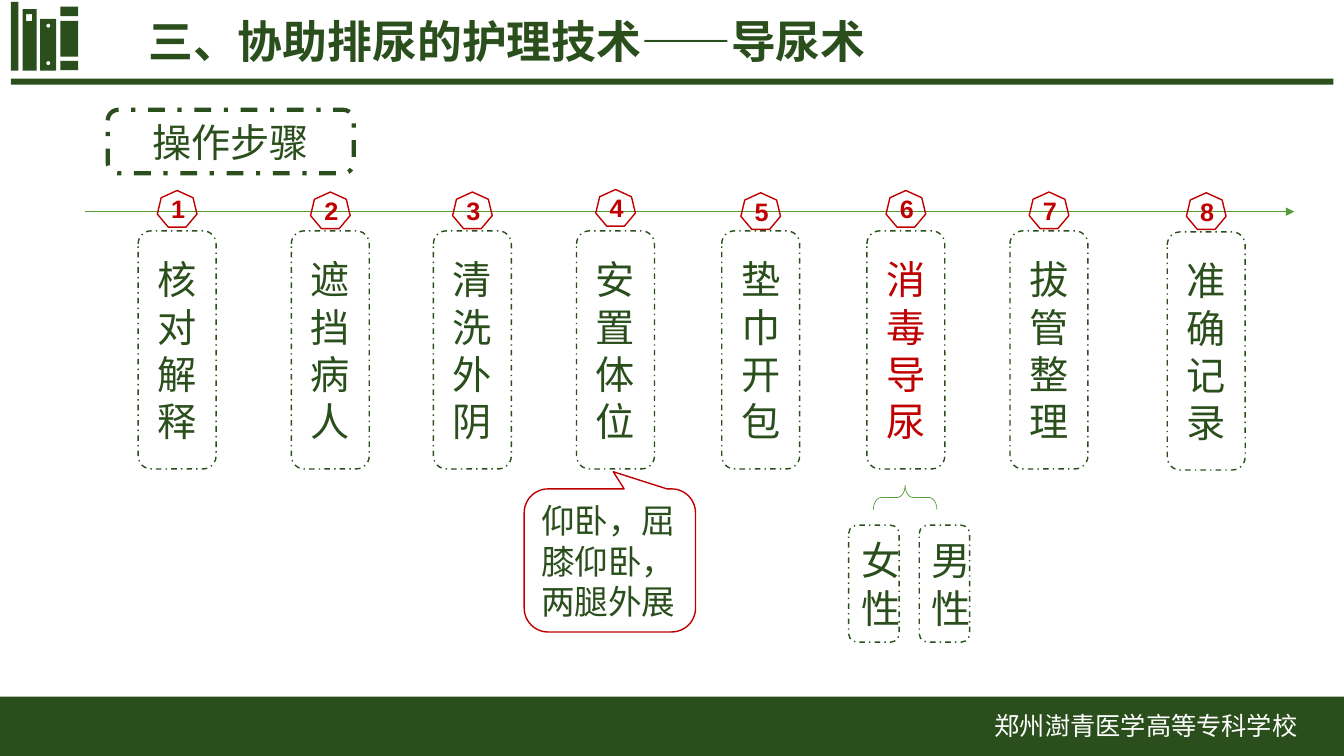
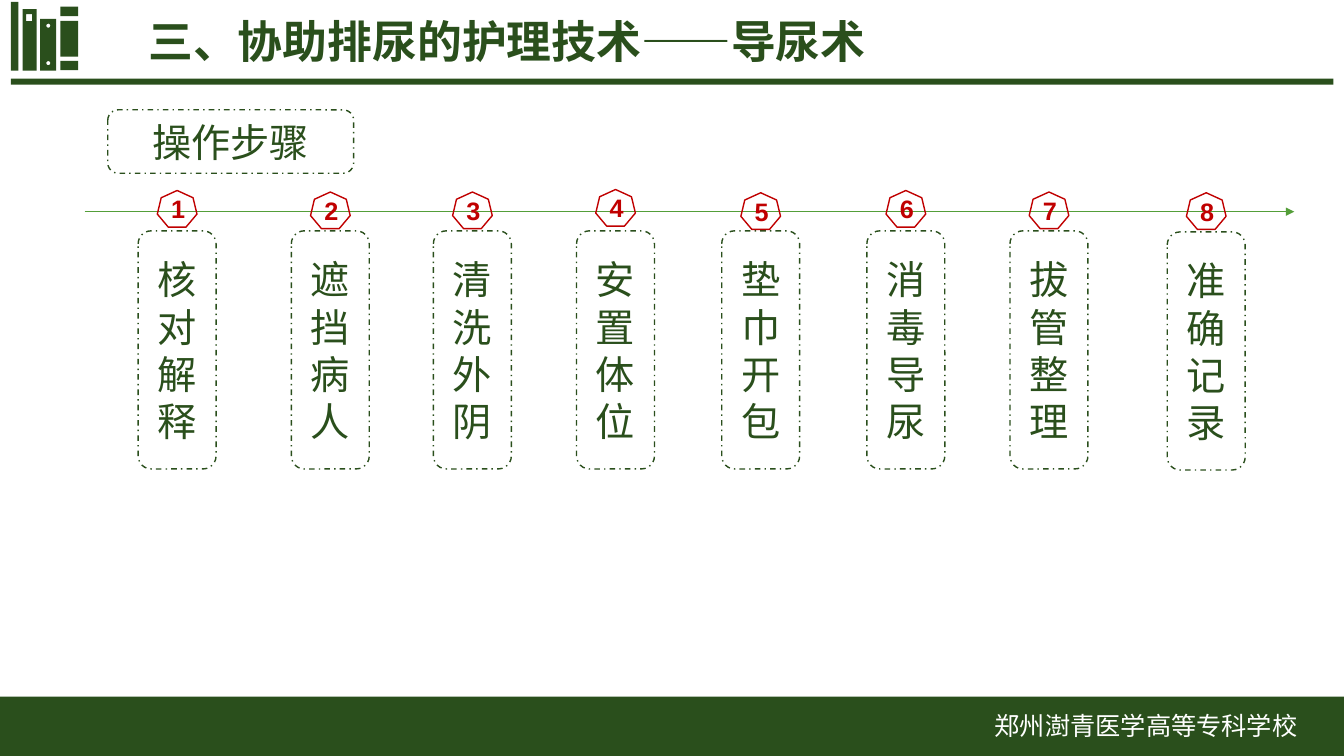
from math import cos, pi, sin

from lxml.etree import SubElement
from pptx import Presentation
from pptx.dml.color import RGBColor
from pptx.enum.dml import MSO_LINE
from pptx.enum.shapes import MSO_CONNECTOR, MSO_SHAPE
from pptx.enum.text import MSO_ANCHOR, PP_ALIGN
from pptx.oxml.ns import qn
from pptx.util import Inches, Pt

WIDTH, HEIGHT = Inches(13.33), Inches(7.5)
COLORS = {"green": "2A4F1C", "leaf": "549E39", "red": "C00000", "white": "FFFFFF"}
LATIN, CHINESE = "Arial", "Noto Sans CJK SC"
TITLE = "三、协助排尿的护理技术——导尿术"
SCHOOL = "郑州澍青医学高等专科学校"
HEADING = "操作步骤"
STEP_WIDTH, STEP_HEIGHT = 5.8, 31.5
BADGE_WIDTH, BADGE_HEIGHT = 2.95, 4.85
STEPS = [
    ("核对解释", 10.28, 30.53, 25.2),
    ("遮挡病人", 21.68, 30.53, 25.4),
    ("清洗外阴", 32.25, 30.53, 25.4),
    ("安置体位", 42.9, 30.53, 25.07),
    ("垫巾开包", 53.7, 30.53, 25.5),
    ("消毒导尿", 64.5, 30.53, 25.2),
    ("拔管整理", 75.15, 30.53, 25.4),
    ("准确记录", 86.85, 30.67, 25.5),
]
FRAME_BARS = [
    (0.82, 10.4, 98.4, 0.8),
    (0.82, 0.27, 0.55, 9.07),
    (4.5, 8.05, 1.31, 1.25),
    (4.5, 2.75, 1.31, 4.75),
    (4.5, 0.9, 1.31, 1.25),
    (0, 92.13, 100, 7.87),
]


def across(share):
    return round(WIDTH * share / 100)


def down(share):
    return round(HEIGHT * share / 100)


def place(left, top, width, height):
    return across(left), down(top), across(width), down(height)


def color(name):
    return RGBColor.from_string(COLORS[name])


def fill_green(shape):
    shape.shadow.inherit = False
    shape.fill.solid()
    shape.fill.fore_color.rgb = color("green")
    shape.line.fill.background()


def write(shape, text, size, ink="green", bold=False, font=LATIN,
          align=PP_ALIGN.CENTER, spacing=None):
    frame = shape.text_frame
    frame.word_wrap = True
    frame.vertical_anchor = MSO_ANCHOR.MIDDLE
    para = frame.paragraphs[0]
    para.alignment = align
    if spacing:
        para.line_spacing = Pt(spacing)
    span = para.add_run()
    span.text = text
    span.font.name = font
    span.font.size = Pt(size)
    span.font.bold = bold
    span.font.color.rgb = color(ink)
    east_asian = SubElement(span.font._element, qn("a:ea"))
    east_asian.set("typeface", CHINESE)


def add_outline(page, kind, bounds, ink="green", weight=1, dash=None):
    shape = page.shapes.add_shape(kind, *place(*bounds))
    shape.shadow.inherit = False
    shape.fill.background()
    shape.line.color.rgb = color(ink)
    shape.line.width = Pt(weight)
    if dash:
        shape.line.dash_style = dash
    return shape


def add_label(page, text, bounds, ink="green", weight=1):
    box = add_outline(page, MSO_SHAPE.ROUNDED_RECTANGLE, bounds,
                      weight=weight, dash=MSO_LINE.DASH_DOT)
    write(box, text, 28, ink, spacing=33.75)


def corners(left, top, width, height):
    x, y, w, h = place(left, top, width, height)
    return [(x, y), (x + w, y), (x + w, y + h), (x, y + h)]


def circle(center_x, center_y, radius, count=16):
    x, y, r = across(center_x), down(center_y), across(radius)
    angles = [2 * pi * index / count for index in range(count)]
    return [(round(x + r * cos(angle)), round(y + r * sin(angle))) for angle in angles]


def add_binder(page, outline, holes):
    builder = page.shapes.build_freeform(*outline[0])
    builder.add_line_segments(outline[1:], close=True)
    for hole in holes:
        builder.move_to(*hole[0])
        builder.add_line_segments(hole[1:], close=True)
    binder = builder.convert_to_shape()
    fill_green(binder)
    return binder


def add_frame(layout, page):
    for placeholder in list(layout.placeholders)[1:]:
        layout.shapes.element.remove(placeholder.element)
    parts = []
    for bounds in FRAME_BARS:
        bar = page.shapes.add_shape(MSO_SHAPE.RECTANGLE, *place(*bounds))
        fill_green(bar)
        parts.append(bar)
    parts.append(add_binder(page, corners(2.98, 2.5, 1.2, 6.83),
                            [circle(3.6, 3.4, 0.15), circle(3.6, 8.35, 0.15)]))
    parts.append(add_binder(page, corners(1.68, 1.2, 1.05, 8.13),
                            [corners(1.95, 1.87, 0.45, 0.93)]))
    for part in parts:
        layout.shapes.element.append(part.element)


def add_titles(page):
    title = page.shapes.title
    title.left, title.top, title.width, title.height = place(10.28, 1.2, 68.63, 8.4)
    write(title, TITLE, 32, bold=True, font=CHINESE, align=PP_ALIGN.LEFT)
    school = page.shapes.add_textbox(*place(73.28, 93.2, 24.2, 5.6))
    write(school, SCHOOL, 18, "white", font=CHINESE, align=PP_ALIGN.LEFT)


def add_timeline(page):
    axis = page.shapes.add_connector(
        MSO_CONNECTOR.STRAIGHT, across(6.3), down(28), across(96.3), down(28))
    axis.line.color.rgb = color("leaf")
    axis.line.width = Pt(0.5)
    SubElement(axis.line._get_or_add_ln(), qn("a:tailEnd")).set("type", "triangle")
    SubElement(axis.element.spPr, qn("a:effectLst"))


def add_steps(page, highlight):
    inset = (STEP_WIDTH - BADGE_WIDTH) / 2
    for number, (text, left, top, badge_top) in enumerate(STEPS, 1):
        ink = "red" if number == highlight else "green"
        add_label(page, text, (left, top, STEP_WIDTH, STEP_HEIGHT), ink)
        badge = add_outline(page, MSO_SHAPE.HEPTAGON,
                            (left + inset, badge_top, BADGE_WIDTH, BADGE_HEIGHT), "red")
        write(badge, str(number), 18, "red", bold=True)


def add_details(page):
    brace = add_outline(page, MSO_SHAPE.RIGHT_BRACE, (66.45, 61.6, 1.8, 8.4), "leaf", 0.5)
    brace.rotation = 270
    brace.adjustments[0] = 0.33
    for text, left in (("女性", 63.15), ("男性", 68.4)):
        add_label(page, text, (left, 69.47, 3.75, 15.47))
    callout = add_outline(page, MSO_SHAPE.ROUNDED_RECTANGULAR_CALLOUT,
                          (39, 64.67, 12.75, 18.93), "red")
    callout.adjustments[0] = 0.02
    callout.adjustments[1] = -0.62
    write(callout, "仰卧，屈膝仰卧，两腿外展", 24, align=PP_ALIGN.LEFT, spacing=29)


def add_step_page(page, heading_weight, highlight=None):
    add_titles(page)
    add_timeline(page)
    add_label(page, HEADING, (8.02, 14.53, 18.3, 8.4), weight=heading_weight)
    add_steps(page, highlight)


def main():
    deck = Presentation()
    deck.slide_width, deck.slide_height = WIDTH, HEIGHT
    layout = deck.slide_layouts[5]
    detail_page = deck.slides.add_slide(layout)
    add_frame(layout, detail_page)
    add_step_page(detail_page, heading_weight=3, highlight=6)
    add_details(detail_page)
    overview_page = deck.slides.add_slide(layout)
    add_step_page(overview_page, heading_weight=1)
    deck.save("out.pptx")


if __name__ == "__main__":
    main()
